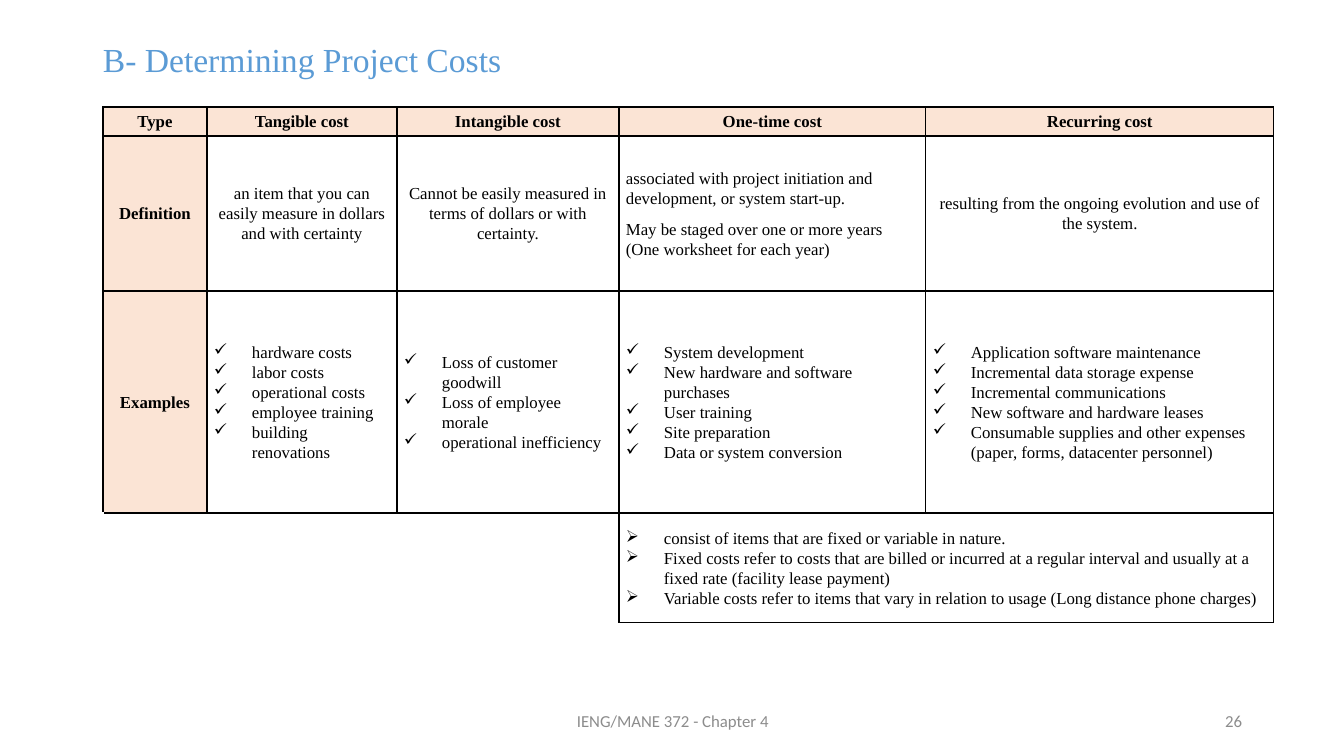
from lxml import etree
from pptx import Presentation
from pptx.dml.color import RGBColor
from pptx.enum.text import MSO_ANCHOR, PP_ALIGN
from pptx.oxml.ns import qn
from pptx.util import Pt

SLIDE_W, SLIDE_H = 1344, 756
EMU_PER_PX = 12192000 / SLIDE_W
LEFT, CENTER, RIGHT = PP_ALIGN.LEFT, PP_ALIGN.CENTER, PP_ALIGN.RIGHT
TOP, MIDDLE = MSO_ANCHOR.TOP, MSO_ANCHOR.MIDDLE
SERIF, SANS = "Times New Roman", "Calibri"
BLACK, WHITE, BLUE, GREY, PEACH = "000000", "FFFFFF", "5B9BD5", "8C8C8C", "FBE4D5"
CHECK, ARROW = "✓", "➢"
CELL_MARGIN, LIST_INDENT = 7, 38

COLUMN_WIDTHS = [104, 190, 222, 307, 348]
ROW_HEIGHTS = [29, 155, 222, 110]
HEADINGS = ["Type", "Tangible cost", "Intangible cost", "One-time cost", "Recurring cost"]
DEFINITIONS = [
    ["an item that you can easily measure in dollars and with certainty"],
    ["Cannot be easily measured in terms of dollars or with certainty."],
    ["associated with project initiation and development, or system start-up.",
     "May be staged over one or more years (One worksheet for each year)"],
    ["resulting from the ongoing evolution and use of the system."],
]
EXAMPLES = [
    ["hardware costs", "labor costs", "operational costs", "employee training",
     "building renovations"],
    ["Loss of customer goodwill", "Loss of employee morale", "operational inefficiency"],
    ["System development", "New hardware and software purchases", "User training",
     "Site preparation", "Data or system conversion"],
    ["Application software maintenance", "Incremental data storage expense",
     "Incremental communications", "New software and hardware leases",
     "Consumable supplies and other expenses (paper, forms, datacenter personnel)"],
]
COST_NOTES = [
    "consist of items that are fixed or variable in nature.",
    "Fixed costs refer to costs that are billed or incurred at a regular interval "
    "and usually at a fixed rate (facility lease payment)",
    "Variable costs refer to items that vary in relation to usage "
    "(Long distance phone charges)",
]


def px(length):
    return round(length * EMU_PER_PX)


def color(hex_code):
    return RGBColor.from_string(hex_code)


def style_font(paragraph, name, size, hex_code, bold=False):
    font = paragraph.font
    font.name, font.size, font.bold = name, Pt(size), bold
    font.color.rgb = color(hex_code)


def add_label(slide, box, text, font_name, size, hex_code, align=LEFT, anchor=MIDDLE):
    frame = slide.shapes.add_textbox(*map(px, box)).text_frame
    frame.word_wrap = True
    frame.vertical_anchor = anchor
    paragraph = frame.paragraphs[0]
    paragraph.text = text
    paragraph.alignment = align
    style_font(paragraph, font_name, size, hex_code)
    return paragraph


def add_bullet(paragraph, symbol):
    properties = paragraph._p.get_or_add_pPr()
    properties.set("marL", str(px(LIST_INDENT)))
    properties.set("indent", str(-px(LIST_INDENT)))
    etree.SubElement(properties, qn("a:buChar")).set("char", symbol)


def set_borders(cell, left=BLACK, bottom=BLACK):
    properties = cell._tc.get_or_add_tcPr()
    for side, hex_code in (("L", left), ("R", BLACK), ("T", BLACK), ("B", bottom)):
        line = etree.SubElement(properties, qn(f"a:ln{side}"), w=str(Pt(1)))
        fill = etree.SubElement(line, qn("a:solidFill"))
        etree.SubElement(fill, qn("a:srgbClr"), val=hex_code)


def fill_cell(cell, texts, align=LEFT, bold=False, bullet=None):
    cell.vertical_anchor = MIDDLE
    cell.margin_left = cell.margin_right = px(CELL_MARGIN)
    cell.margin_top = cell.margin_bottom = 0
    frame = cell.text_frame
    for index, text in enumerate(texts):
        paragraph = frame.add_paragraph() if index else frame.paragraphs[0]
        paragraph.text = text
        paragraph.alignment = align
        paragraph.line_spacing = 1.07
        paragraph.space_after = Pt(0 if bullet else 8)
        style_font(paragraph, SERIF, 12, BLACK, bold)
        if bullet:
            add_bullet(paragraph, bullet)


def add_cost_table(slide):
    box = 103, 107, sum(COLUMN_WIDTHS), sum(ROW_HEIGHTS)
    table = slide.shapes.add_table(
        len(ROW_HEIGHTS), len(COLUMN_WIDTHS), *map(px, box)).table
    table.first_row = table.horz_banding = False
    for column, width in zip(table.columns, COLUMN_WIDTHS):
        column.width = px(width)
    for row, height in zip(table.rows, ROW_HEIGHTS):
        row.height = px(height)

    # Grid lines and header fills
    last_row = len(ROW_HEIGHTS) - 1
    for r in range(len(ROW_HEIGHTS)):
        for c in range(len(COLUMN_WIDTHS)):
            cell = table.cell(r, c)
            if r == last_row and c < 3:
                set_borders(cell, left=WHITE, bottom=WHITE)
            else:
                set_borders(cell)
            if r == 0 or (c == 0 and r < last_row):
                cell.fill.solid()
                cell.fill.fore_color.rgb = color(PEACH)
            else:
                cell.fill.background()

    # Headings
    for c, heading in enumerate(HEADINGS):
        fill_cell(table.cell(0, c), [heading], CENTER, bold=True)
    for r, heading in enumerate(["Definition", "Examples"], start=1):
        fill_cell(table.cell(r, 0), [heading], CENTER, bold=True)

    # Definitions and examples
    for c, (definition, examples) in enumerate(zip(DEFINITIONS, EXAMPLES), start=1):
        fill_cell(table.cell(1, c), definition, CENTER if len(definition) == 1 else LEFT)
        fill_cell(table.cell(2, c), examples, bullet=CHECK)

    # Notes shared by one-time and recurring costs
    table.cell(last_row, 0).merge(table.cell(last_row, 2))
    table.cell(last_row, 3).merge(table.cell(last_row, 4))
    fill_cell(table.cell(last_row, 3), COST_NOTES, bullet=ARROW)


def main():
    presentation = Presentation()
    presentation.slide_width, presentation.slide_height = px(SLIDE_W), px(SLIDE_H)
    slide = presentation.slides.add_slide(presentation.slide_layouts[6])

    # Title
    title = add_label(slide, (93, 38, 1159, 643), "B- Determining Project Costs",
                      SERIF, 24, BLUE, anchor=TOP)
    title.line_spacing = 0.9
    title.space_before = Pt(10)

    # Footer
    add_label(slide, (446, 701, 454, 40), "IENG/MANE 372 - Chapter 4",
              SANS, 12, GREY, CENTER)
    add_label(slide, (950, 701, 302, 40), "26", SANS, 12, GREY, RIGHT)

    # Cost comparison
    add_cost_table(slide)
    presentation.save("out.pptx")


if __name__ == "__main__":
    main()
